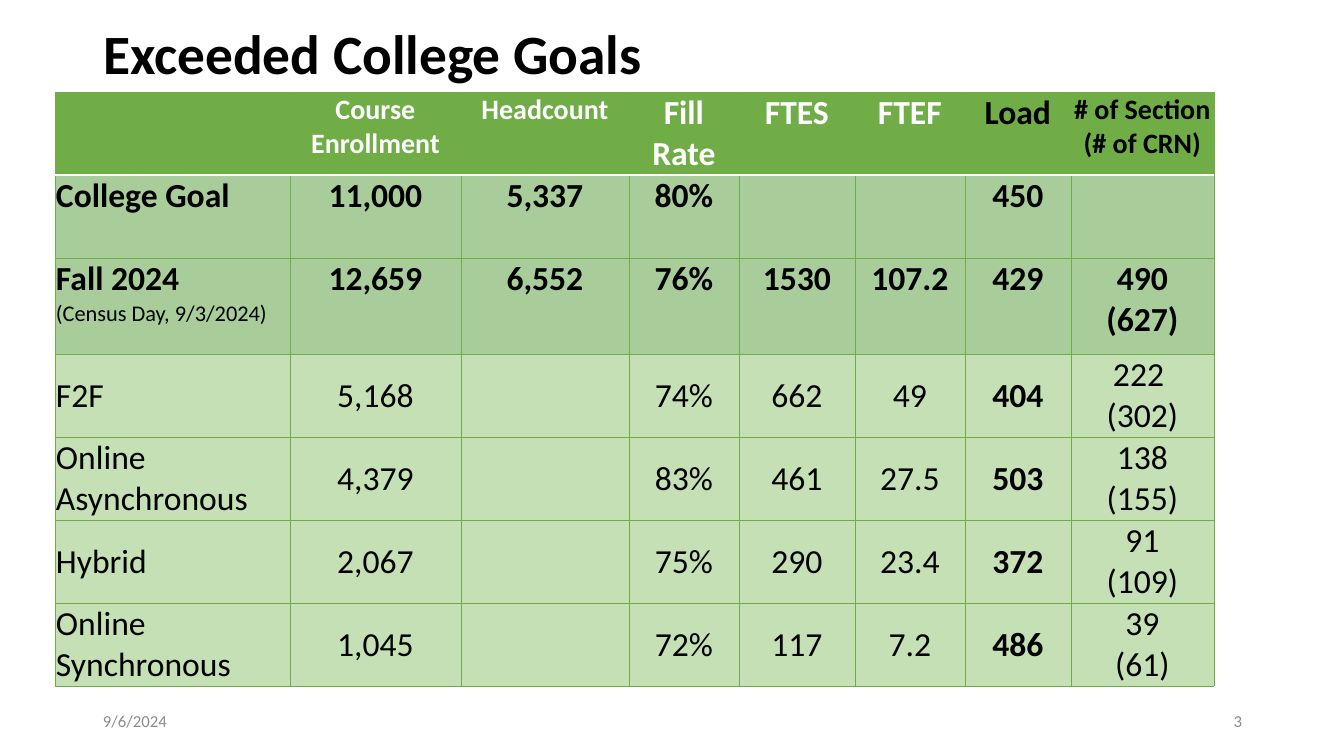
from dataclasses import dataclass

from lxml import etree
from pptx import Presentation
from pptx.dml.color import RGBColor
from pptx.enum.text import MSO_ANCHOR, MSO_AUTO_SIZE, PP_ALIGN
from pptx.oxml.ns import qn
from pptx.util import Pt

LEFT, CENTER, RIGHT = PP_ALIGN.LEFT, PP_ALIGN.CENTER, PP_ALIGN.RIGHT
TOP, MIDDLE = MSO_ANCHOR.TOP, MSO_ANCHOR.MIDDLE
NO_AUTOFIT = MSO_AUTO_SIZE.NONE

TITLE = "Exceeded College Goals"
DATE, PAGE = "9/6/2024", "3"
HEADERS = ["", "Course Enrollment", "Headcount", "Fill Rate", "FTES", "FTEF", "Load",
           "# of Section (# of CRN)"]
SUMMARY = [
    ["College Goal", "11,000", "5,337", "80%", "", "", "450", ""],
    ["Fall 2024\n(Census Day, 9/3/2024)", "12,659", "6,552", "76%", "1530", "107.2", "429",
     "490\n(627)"],
]
MODALITIES = [
    ["F2F", "5,168", "", "74%", "662", "49", "404", "222 \n(302)"],
    ["Online Asynchronous", "4,379", "", "83%", "461", "27.5", "503", "138\n(155)"],
    ["Hybrid", "2,067", "", "75%", "290", "23.4", "372", "91\n(109)"],
    ["Online Synchronous", "1,045", "", "72%", "117", "7.2", "486", "39\n(61)"],
]
ROWS = [HEADERS] + SUMMARY + MODALITIES
COLUMN_WIDTHS = [235, 171, 168, 110, 116, 110, 106, 143]
ROW_HEIGHTS = [83, 83, 96, 83, 83, 83, 83]
TABLE_LEFT, TABLE_TOP = 55, 92
LOAD_COLUMN = HEADERS.index("Load")
SMALL_HEADERS = (1, 2, 7)


@dataclass(frozen=True)
class Theme:
    font: str = "Calibri"
    black: str = "000000"
    white: str = "FFFFFF"
    gray: str = "8C8C8C"
    green: str = "70AD47"
    band: str = "A9CD9A"
    pale: str = "C5E0B4"
    title: float = 39.6
    body: int = 24
    header: int = 20
    note: int = 16
    footer: int = 12


THEME = Theme()


def px(value):
    return round(value * 914400 / 100.8)


def style(paragraph, size, color, bold=False, align=LEFT):
    paragraph.alignment = align
    font = paragraph.font
    font.name, font.size, font.bold = THEME.font, Pt(size), bold
    font.color.rgb = RGBColor.from_string(color)


def add_borders(cell, row):
    properties = cell._tc.get_or_add_tcPr()
    for side in ("lnL", "lnR", "lnT", "lnB"):
        divider = (row, side) in ((0, "lnB"), (1, "lnT"))
        white = divider and cell.text != SUMMARY[0][0]
        line = etree.SubElement(properties, qn(f"a:{side}"), w=str(Pt(1 if white else 0.5)))
        fill = etree.SubElement(line, qn("a:solidFill"))
        etree.SubElement(fill, qn("a:srgbClr"), val=THEME.white if white else THEME.green)


def fill_cell(cell, text, row, column):
    header, summary = row == 0, row <= len(SUMMARY)
    cell.text = text
    cell.margin_left = cell.margin_right = cell.margin_top = px(1)
    cell.margin_bottom = 0
    cell.vertical_anchor = TOP if summary else MIDDLE
    add_borders(cell, row)
    cell.fill.solid()
    color = THEME.green if header else THEME.band if summary else THEME.pale
    cell.fill.fore_color.rgb = RGBColor.from_string(color)
    for index, paragraph in enumerate(cell.text_frame.paragraphs):
        note = column == 0 and index > 0
        small = header and column in SMALL_HEADERS
        size = THEME.note if note else THEME.header if small else THEME.body
        style(paragraph, size,
              THEME.white if header and column < LOAD_COLUMN else THEME.black,
              (summary or column == LOAD_COLUMN) and not note,
              CENTER if column else LEFT)


def add_table(slide):
    frame = slide.shapes.add_table(len(ROWS), len(HEADERS), px(TABLE_LEFT), px(TABLE_TOP),
                                   px(sum(COLUMN_WIDTHS)), px(sum(ROW_HEIGHTS)))
    table = frame.table
    table.first_row = table.horz_banding = False
    for column, width in zip(table.columns, COLUMN_WIDTHS):
        column.width = px(width)
    for row, (texts, height) in enumerate(zip(ROWS, ROW_HEIGHTS)):
        table.rows[row].height = px(height)
        for column, text in enumerate(texts):
            fill_cell(table.cell(row, column), text, row, column)


def add_footer(slide, text, left, align):
    box = slide.shapes.add_textbox(px(left), px(701), px(302), px(40))
    frame = box.text_frame
    frame.word_wrap = True
    frame.vertical_anchor = MIDDLE
    frame.text = text
    style(frame.paragraphs[0], THEME.footer, THEME.gray, align=align)


def main():
    presentation = Presentation()
    presentation.slide_width, presentation.slide_height = px(1344), px(756)
    slide = presentation.slides.add_slide(presentation.slide_layouts[5])
    title = slide.shapes.title
    title.left, title.top, title.width, title.height = px(93), px(22), px(1159), px(69)
    frame = title.text_frame
    frame.text = TITLE
    frame.auto_size = NO_AUTOFIT
    frame.vertical_anchor = MIDDLE
    frame.paragraphs[0].line_spacing = 0.9
    style(frame.paragraphs[0], THEME.title, THEME.black, bold=True)
    add_table(slide)
    add_footer(slide, DATE, 93, LEFT)
    add_footer(slide, PAGE, 950, RIGHT)
    presentation.save("out.pptx")


if __name__ == "__main__":
    main()
